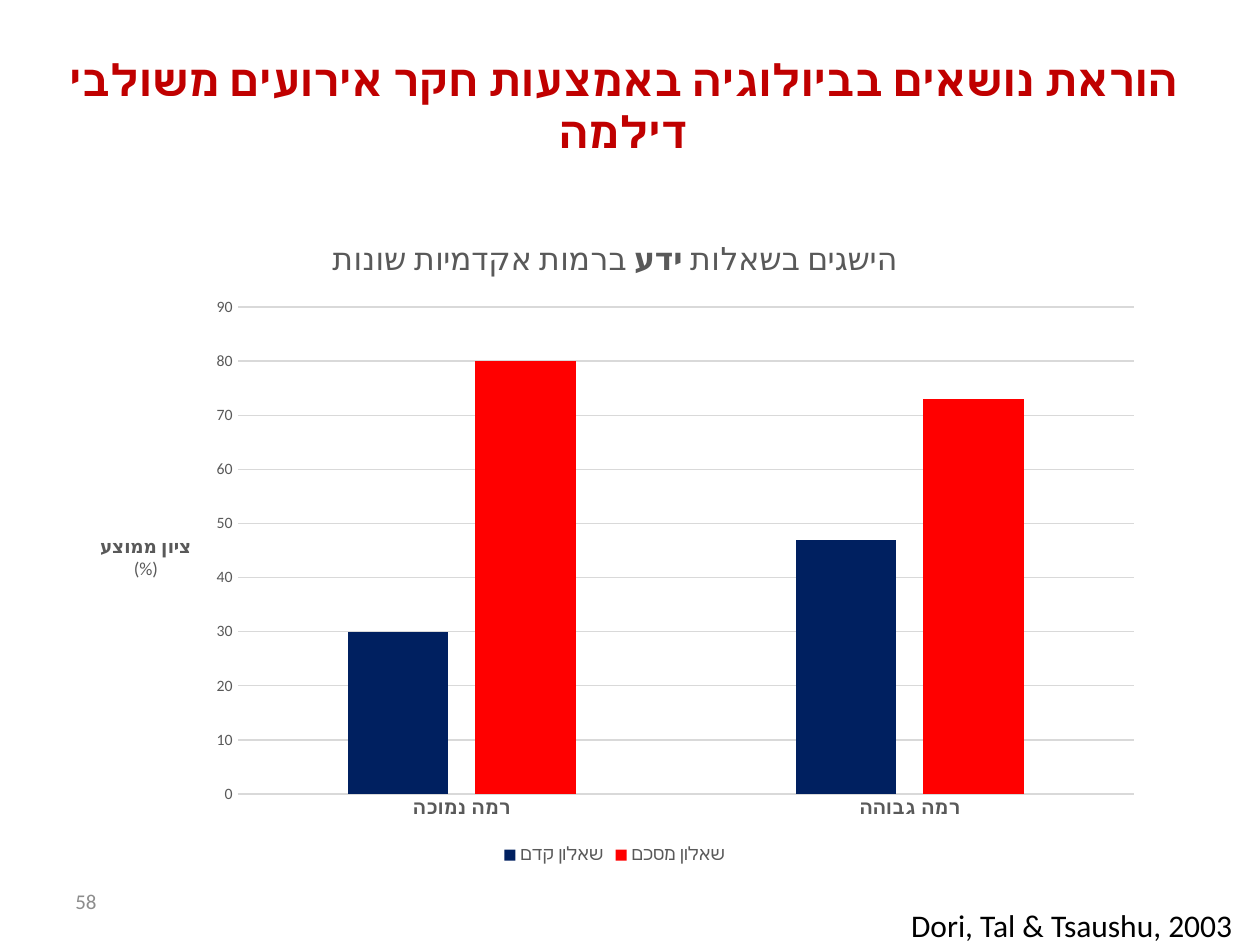
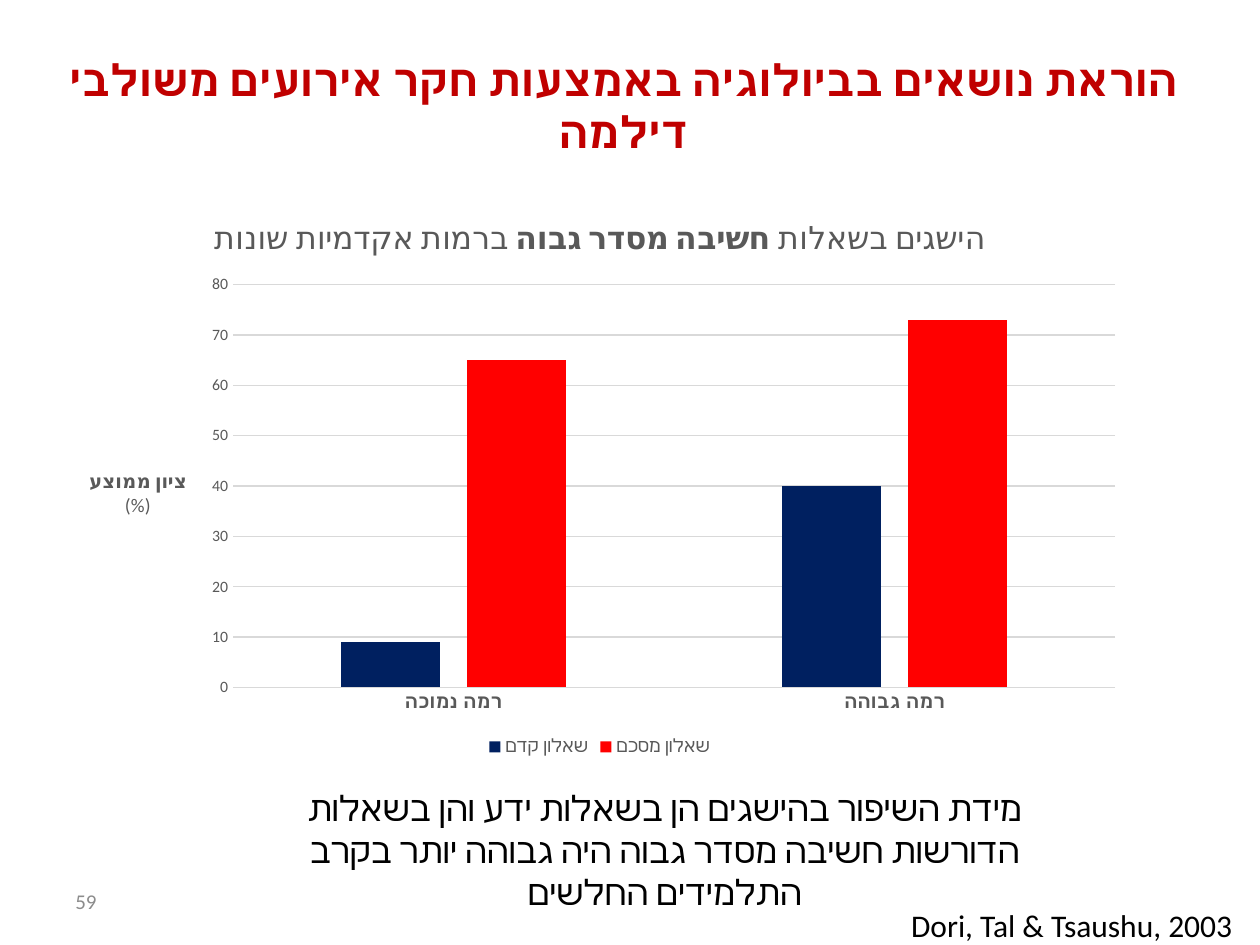
import lxml.etree
import pptx
import pptx.chart.data
import pptx.dml.color
import pptx.enum.chart
import pptx.enum.text
import pptx.oxml.ns
import pptx.util

FONT = "Calibri"
TITLE_RED, BLACK, GREY, NUMBER_GREY, GRID_GREY = "C00000", "000000", "595959", "8C8C8C", "D9D9D9"
ALIGN = pptx.enum.text.PP_ALIGN
TITLE = "הוראת נושאים בביולוגיה באמצעות חקר אירועים משולבי דילמה"
CITATION = "Dori, Tal & Tsaushu, 2003"
CONCLUSION = ("מידת השיפור בהישגים הן בשאלות ידע והן בשאלות הדורשות חשיבה מסדר גבוה "
              "היה גבוהה יותר בקרב התלמידים החלשים")
LEVELS = ["רמה נמוכה", "רמה גבוהה"]
QUESTIONNAIRES = [("שאלון קדם", "002060"), ("שאלון מסכם", "FF0000")]
FIRST_NUMBER = 58

# question kind, chart box, axis maximum, axis title size, scores per questionnaire, conclusion
RESULTS = [
    ("ידע", (0.59, 1.7, 8.58, 5.2), 90, 10.5, [(30, 47), (80, 73)], None),
    ("חשיבה מסדר גבוה", (0.5, 1.55, 8.52, 4.49), 80, 11, [(9, 40), (65, 73)], CONCLUSION),
]


def colour(hex_value):
    return pptx.dml.color.RGBColor.from_string(hex_value)


def write_rtl(paragraph, pieces, size, hex_value, align=None):
    """Fill a right-to-left paragraph with (text, bold) pieces."""
    for text, bold in pieces:
        run = paragraph.add_run()
        run.text = text
        run.font.size, run.font.bold, run.font.name = pptx.util.Pt(size), bold, FONT
        run.font.color.rgb = colour(hex_value)
        complex_script = lxml.etree.SubElement(run.font._element, pptx.oxml.ns.qn("a:cs"))
        complex_script.set("typeface", FONT)
    paragraph.alignment = align
    paragraph._p.get_or_add_pPr().set("rtl", "1")


deck = pptx.Presentation()
deck.slide_width, deck.slide_height = pptx.util.Inches(10), pptx.util.Inches(7.5)
title_only = deck.slide_layouts[5]

for number, (kind, chart_box, top_score, axis_size, scores, conclusion) in enumerate(RESULTS, FIRST_NUMBER):
    slide = deck.slides.add_slide(title_only)

    heading = slide.shapes.title
    heading.left, heading.top, heading.width, heading.height = map(pptx.util.Inches, (0.34, 0.21, 9.22, 1.25))
    heading.text_frame.auto_size = pptx.enum.text.MSO_AUTO_SIZE.NONE
    heading.text_frame.vertical_anchor = pptx.enum.text.MSO_ANCHOR.MIDDLE
    write_rtl(heading.text_frame.paragraphs[0], [(TITLE, True)], 25, TITLE_RED, ALIGN.CENTER)

    # Achievement chart
    achievements = pptx.chart.data.CategoryChartData()
    achievements.categories = LEVELS
    for (questionnaire, _), averages in zip(QUESTIONNAIRES, scores):
        achievements.add_series(questionnaire, averages)
    chart = slide.shapes.add_chart(pptx.enum.chart.XL_CHART_TYPE.COLUMN_CLUSTERED,
                                   *map(pptx.util.Inches, chart_box), achievements).chart
    chart.font.name, chart.font.size = FONT, pptx.util.Pt(10)

    chart.has_title = True
    chart.chart_title.include_in_layout = False
    write_rtl(chart.chart_title.text_frame.paragraphs[0],
              [("הישגים בשאלות ", False), (kind, True), (" ברמות אקדמיות שונות", False)], 18, GREY)

    chart.has_legend = True
    chart.legend.position = pptx.enum.chart.XL_LEGEND_POSITION.BOTTOM
    chart.legend.include_in_layout = False

    plot = chart.plots[0]
    plot.gap_width, plot.overlap, plot.vary_by_categories = 219, -27, False
    for series, (_, fill) in zip(plot.series, QUESTIONNAIRES):
        series.format.fill.solid()
        series.format.fill.fore_color.rgb = colour(fill)

    levels, score_axis = chart.category_axis, chart.value_axis
    for labels, size, bold in [(levels.tick_labels, 11, True), (score_axis.tick_labels, 9, False),
                               (chart.legend, 10.5, False)]:
        labels.font.name, labels.font.size, labels.font.bold = FONT, pptx.util.Pt(size), bold
        labels.font.color.rgb = colour(GREY)
    for axis in (levels, score_axis):
        axis.major_tick_mark = axis.minor_tick_mark = pptx.enum.chart.XL_TICK_MARK.NONE
    for line in (levels.format.line, score_axis.major_gridlines.format.line):
        line.color.rgb = colour(GRID_GREY)
        line.width = pptx.util.Pt(0.75)
    score_axis.format.line.fill.background()
    score_axis.minimum_scale, score_axis.maximum_scale, score_axis.major_unit = 0, top_score, 10

    axis_text = score_axis.axis_title.text_frame
    write_rtl(axis_text.paragraphs[0], [("ציון ממוצע", True)], axis_size, GREY)
    write_rtl(axis_text.add_paragraph(), [("(%)", False)], axis_size, GREY)
    upright = axis_text._txBody.find(pptx.oxml.ns.qn("a:bodyPr"))
    upright.set("rot", "0")
    upright.set("vert", "horz")

    # Slide number, citation and conclusion
    notes = [
        (str(number), (0.5, 6.95, 2.33, 0.4), 12, NUMBER_GREY, ALIGN.LEFT, pptx.enum.text.MSO_ANCHOR.MIDDLE),
        (CITATION, (6.81, 7.14, 3.07, 0.4), 18, BLACK, ALIGN.RIGHT, pptx.enum.text.MSO_ANCHOR.TOP),
    ]
    if conclusion:
        notes.append((conclusion, (1.85, 6.19, 6.85, 0.77), 20, BLACK, ALIGN.CENTER,
                      pptx.enum.text.MSO_ANCHOR.TOP))
    for text, box, size, hex_value, align, anchor in notes:
        frame = slide.shapes.add_textbox(*map(pptx.util.Inches, box)).text_frame
        frame.word_wrap, frame.vertical_anchor = True, anchor
        write_rtl(frame.paragraphs[0], [(text, False)], size, hex_value, align)

deck.save("out.pptx")
